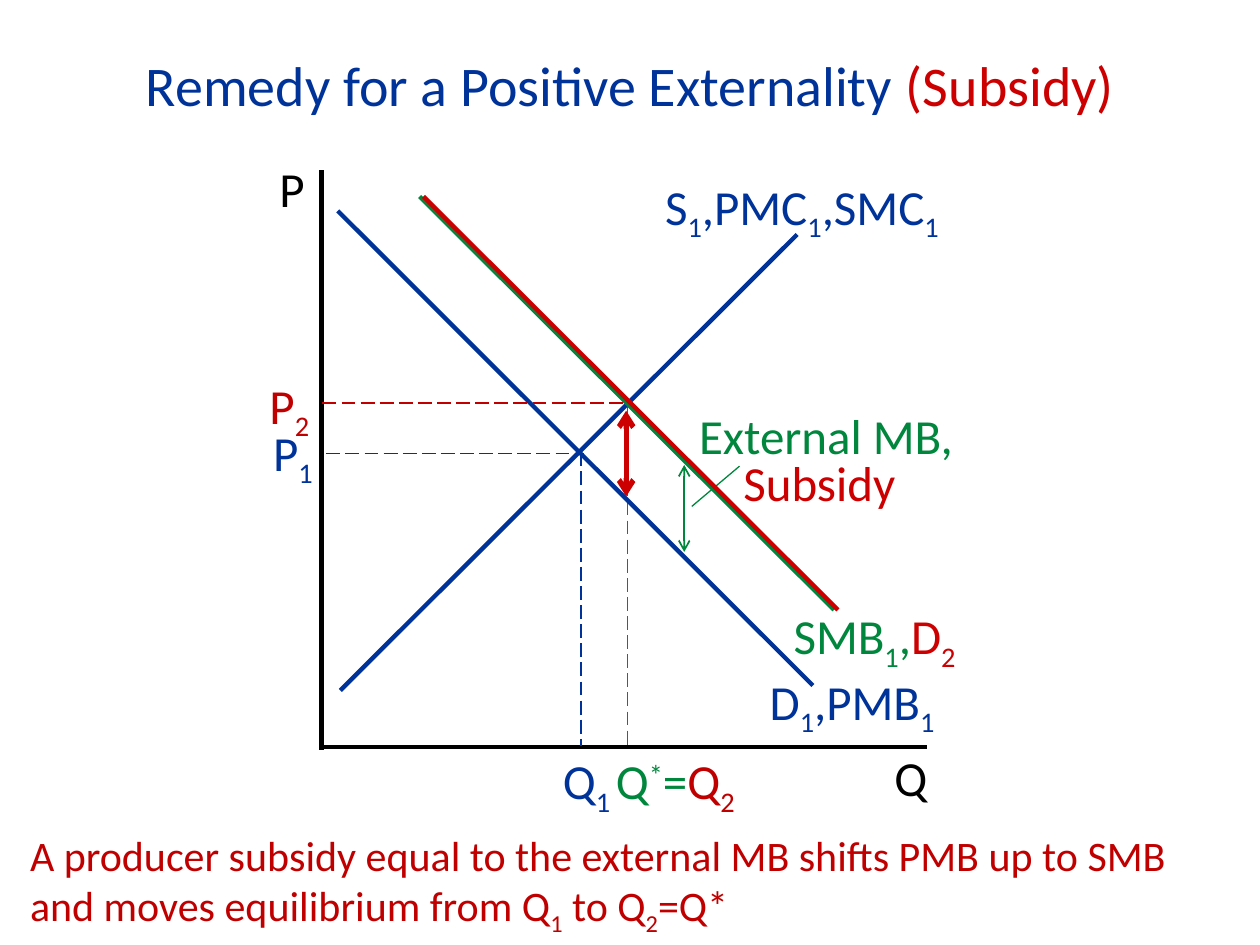
from dataclasses import dataclass

from lxml import etree
from pptx import Presentation
from pptx.dml.color import RGBColor
from pptx.enum.dml import MSO_LINE
from pptx.enum.shapes import MSO_CONNECTOR
from pptx.enum.text import MSO_ANCHOR, MSO_AUTO_SIZE, PP_ALIGN
from pptx.oxml.ns import qn
from pptx.util import Pt

STRAIGHT = MSO_CONNECTOR.STRAIGHT
LONG_DASH = MSO_LINE.LONG_DASH
TOP, MIDDLE = MSO_ANCHOR.TOP, MSO_ANCHOR.MIDDLE
LEFT, CENTER = PP_ALIGN.LEFT, PP_ALIGN.CENTER
FIT_SHAPE = MSO_AUTO_SIZE.SHAPE_TO_FIT_TEXT
BASELINES = {"_": "-25000", "^": "30000"}


@dataclass(frozen=True)
class Theme:
    font: str = "Calibri"
    blue: str = "003399"
    green: str = "00863D"
    red: str = "CC0000"
    dark_red: str = "C00000"
    black: str = "000000"
    title: int = 32
    label: int = 28
    caption: int = 24


THEME = Theme()

deck = Presentation()
deck.slide_width, deck.slide_height = Pt(720), Pt(540)
slide = deck.slides.add_slide(deck.slide_layouts[6])


def add_text(lines, box, size=THEME.label, align=LEFT, anchor=TOP, spacing=None, indents=()):
    """Each line is a list of (text, colour); _x sets x as subscript, ^x as superscript."""
    shape = slide.shapes.add_textbox(*map(Pt, box))
    frame = shape.text_frame
    frame.word_wrap, frame.auto_size, frame.vertical_anchor = True, FIT_SHAPE, anchor
    for number, line in enumerate(lines):
        paragraph = frame.add_paragraph() if number else frame.paragraphs[0]
        paragraph.alignment = align
        if spacing:
            paragraph.line_spacing = spacing
        if indents:
            paragraph._p.get_or_add_pPr().set("marL", str(Pt(indents[number])))
        for text, color in line:
            pieces = text.replace("_", "\n_").replace("^", "\n^").split("\n")
            for piece in pieces:
                parts = [(piece, None)]
                if piece[:1] in BASELINES:
                    parts = [(piece[1], BASELINES[piece[0]]), (piece[2:], None)]
                for content, baseline in parts:
                    if not content:
                        continue
                    run = paragraph.add_run()
                    run.text = content
                    run.font.name, run.font.size = THEME.font, Pt(size)
                    run.font.color.rgb = RGBColor.from_string(color)
                    if baseline:
                        run._r.get_or_add_rPr().set("baseline", baseline)


def add_line(start, end, color, width, dashed=False, arrows=False):
    connector = slide.shapes.add_connector(STRAIGHT, *map(Pt, (*start, *end)))
    connector.line.color.rgb = RGBColor.from_string(color)
    connector.line.width = Pt(width)
    if dashed:
        connector.line.dash_style = LONG_DASH
    if arrows:
        outline = connector.line._get_or_add_ln()
        for tag in ("a:headEnd", "a:tailEnd"):
            etree.SubElement(outline, qn(tag), type="arrow")
    etree.SubElement(connector._element.spPr, qn("a:effectLst"))


# Title
add_text([[("Remedy for a Positive Externality ", THEME.blue), ("(Subsidy)", THEME.red)]],
         (50.4, 25.2, 619.2, 46), size=THEME.title, align=CENTER, anchor=MIDDLE)

# Optimal quantity, supply curve and axes
add_line((358.5, 232), (358.5, 426.5), THEME.green, 1, dashed=True)
add_line((194.5, 394.5), (455.5, 134), THEME.blue, 2.5)
add_line((183.8, 97.2), (183.8, 428.4), THEME.black, 2.5)
add_line((184.3, 427), (530, 427), THEME.black, 2.5)

# Private demand and first quantity
add_line((193, 120.5), (464.5, 391.7), THEME.blue, 2.5)
add_line((331.9, 258.5), (331.9, 426.5), THEME.blue, 1, dashed=True)

# External benefit: gap arrow and pointer
add_line((391, 265.7), (391, 315.4), THEME.green, 1, arrows=True)
add_line((422.6, 266.4), (395.3, 289.4), THEME.green, 0.75)

# Social benefit and subsidised demand, side by side
for left, color in ((239.8, THEME.green), (242, THEME.red)):
    add_line((left, 112.3), (left + 236.8, 348.5), color, 2.5)

# Subsidy arrow and price levels
add_line((357.8, 234.7), (357.8, 283.7), THEME.red, 3, arrows=True)
add_line((186.5, 259.2), (334, 259.2), THEME.blue, 1, dashed=True)
add_line((184.3, 230.4), (358.5, 230.4), THEME.dark_red, 1, dashed=True)

# Axis, curve, price and quantity labels
labels = [
    ([("Q", THEME.black)], (504, 423.4, 36.7, 41), None),
    ([("P", THEME.black)], (152.6, 93.6, 32.4, 35.3), 0.8),
    ([("S_1,PMC_1,SMC_1", THEME.blue)], (373, 97.2, 180, 41), None),
    ([("D_1,PMB_1", THEME.blue)], (432.7, 380.2, 113.8, 41), None),
    ([("SMB_1,", THEME.green), ("D_2", THEME.red)], (446.4, 342.7, 116, 41), None),
    ([("Q_1", THEME.blue)], (314.6, 429.1, 54, 34.6), 0.8),
    ([("Q^*=", THEME.green), ("Q_2", THEME.dark_red)], (344.9, 429.1, 119.5, 35.3), 0.8),
    ([("P_1", THEME.blue)], (149, 241.2, 41.8, 35.3), 0.8),
    ([("P_2", THEME.dark_red)], (146.9, 214.6, 41.8, 35.3), 0.8),
]
for line, box, spacing in labels:
    add_text([line], box, spacing=spacing)

add_text([[("External MB,", THEME.green)], [("Subsidy", THEME.red)]],
         (392.4, 234.7, 160.6, 62), spacing=0.8, indents=(0, 25.3))

# Conclusion
add_text([[("A producer subsidy equal to the external MB shifts PMB up to SMB "
            "and moves equilibrium from Q_1 to Q_2=Q*", THEME.dark_red)]],
         (10.1, 470.2, 695.5, 65.5), size=THEME.caption)

deck.save("out.pptx")
